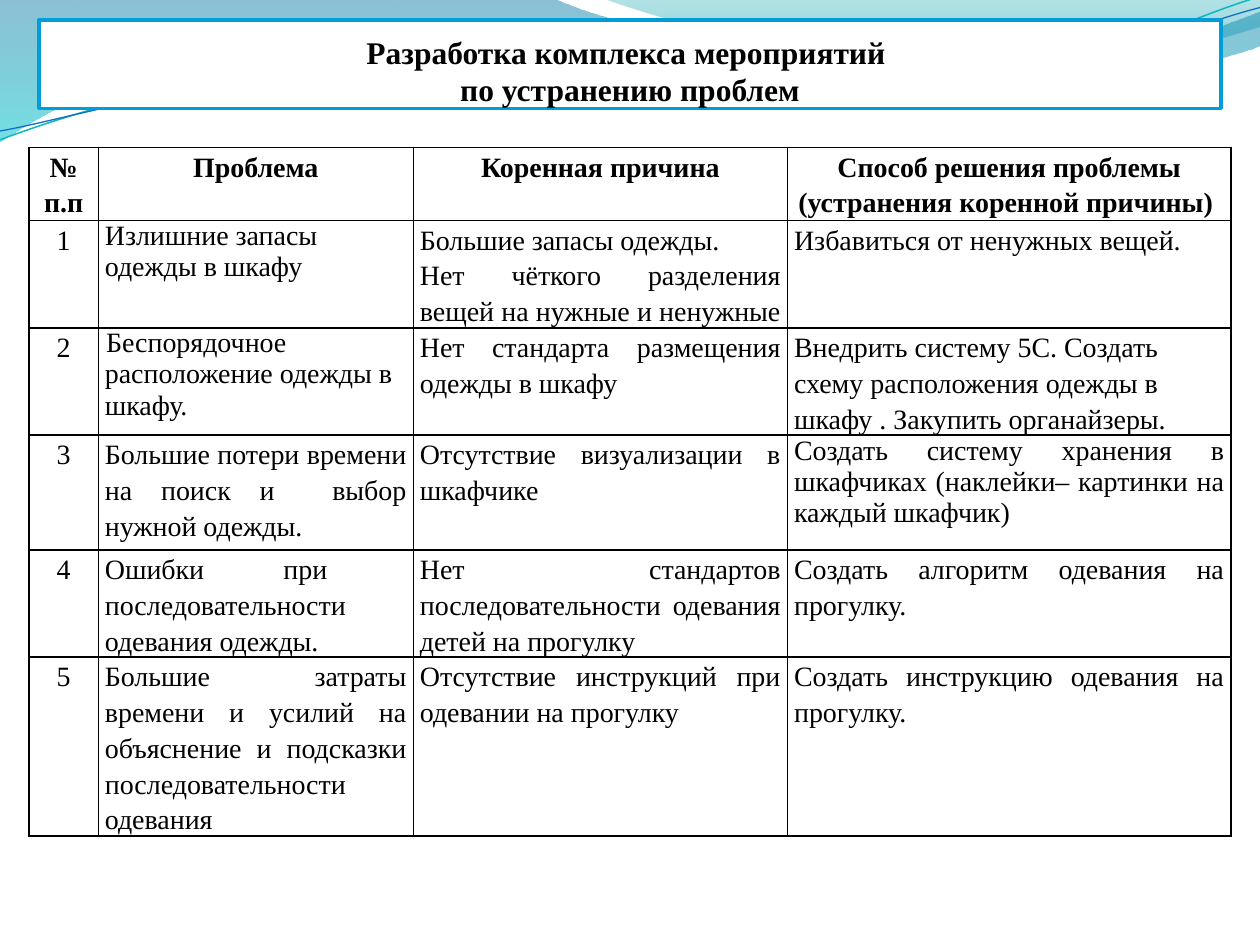
from lxml import etree
from pptx import Presentation, util as u
from pptx.dml.color import RGBColor
from pptx.enum import text
from pptx.oxml.ns import qn

FONT = "Times New Roman"
LEFT, CENTER, JUSTIFY = text.PP_ALIGN.LEFT, text.PP_ALIGN.CENTER, text.PP_ALIGN.JUSTIFY
TITLE = "Разработка комплекса мероприятий \vпо устранению проблем"
ROWS = [
    ["№\nп.п", "Проблема", "Коренная причина",
     "Способ решения проблемы (устранения коренной причины) "],
    ["1", "Излишние запасы одежды в шкафу",
     "Большие запасы одежды.\nНет чёткого разделения вещей на нужные и ненужные ",
     "Избавиться от ненужных вещей. "],
    ["2", "Беспорядочное расположение одежды в шкафу.",
     "Нет стандарта размещения одежды в шкафу",
     "Внедрить систему 5С. Создать схему расположения одежды в шкафу . Закупить органайзеры."],
    ["3", "Большие потери времени на поиск и  выбор нужной одежды.",
     "Отсутствие визуализации в шкафчике",
     "Создать систему хранения в шкафчиках (наклейки– картинки на каждый шкафчик)"],
    ["4", "Ошибки при  последовательности одевания одежды. ",
     "Нет стандартов последовательности одевания детей на прогулку",
     "Создать алгоритм одевания на прогулку."],
    ["5", "Большие затраты времени и усилий на объяснение и подсказки последовательности одевания ",
     "Отсутствие инструкций при одевании на прогулку",
     "Создать инструкцию одевания на прогулку."],
]
COLS = [0.55, 2.5, 2.97, 3.52]
HEIGHTS = [0.58, 0.85, 0.85, 0.91, 0.85, 1.42]
SPECIAL = {
    (1, 1): {"alignment": LEFT, "line_spacing": 1.0},
    (2, 1): {"alignment": LEFT, "line_spacing": 1.0},
    (2, 3): {"alignment": LEFT},
    (3, 3): {"line_spacing": 1.0, "space_before": u.Pt(3.6)},
}
WAVES = [
    ([(0, 0), (4.4, -0.01), (4.76, 0.17, 6.64, 0.63, 7.58, 0.63),
      (8.53, 0.63, 9.58, 0.26, 10, 0.09), (10.01, 0.36),
      (9.83, 0.44, 8.7, 0.76, 7.46, 0.75), (6.22, 0.75, 3.82, 0.28, 2.57, 0.34),
      (1.29, 0.36, 0.46, 0.83, -0.01, 1.13), (0, 0)],
     [(0, "0074A1", 45), (1, "00C6CF", 55)]),
    ([(4.79, -0.01), (5.09, 0.11, 6.82, 0.62, 7.69, 0.65),
      (8.56, 0.69, 9.61, 0.32, 10, 0.21), (10, 0), (4.79, -0.01)],
     [(0, "00A1A9", 30), (0.8, "008BBF", 45)]),
]
CURVES = [
    ([(0, 1.11), (0.48, 0.93, 1.58, 0.57, 2.77, 0.52),
      (3.95, 0.47, 5.93, 0.89, 7.13, 0.8), (8.33, 0.71, 9.38, 0.15, 9.98, -0.02)],
     "0AB8BF", 0.85),
    ([(0, 1.04), (0.47, 0.96, 1.64, 0.61, 2.83, 0.56),
      (4.03, 0.51, 5.97, 0.84, 7.17, 0.75), (8.36, 0.67, 9.41, 0.21, 10, 0.06)],
     "0F6FC6", 0.75),
]


def rgb(value):
    return RGBColor.from_string(value)


def assign(obj, values):
    for name, value in values.items():
        setattr(obj, name, value)


def draw(slide, path, close):
    ends = [(u.Inches(seg[-2]), u.Inches(seg[-1])) for seg in path]
    builder = slide.shapes.build_freeform(*ends[0])
    builder.add_line_segments(ends[1:], close=close)
    sp = builder.convert_to_shape()
    sp.shadow.inherit = False
    lines = list(sp._element.spPr.iter(qn("a:lnTo")))
    for line, seg in zip(lines, path[1:]):
        if len(seg) == 6:
            bend = etree.Element(qn("a:cubicBezTo"))
            for x, y in zip(seg[::2], seg[1::2]):
                etree.SubElement(bend, qn("a:pt"), x=str(u.Inches(x) - sp.left),
                                 y=str(u.Inches(y) - sp.top))
            line.getparent().replace(line, bend)
    return sp


def add_waves(slide):
    for path, stops in WAVES:
        sp = draw(slide, path, True)
        sp.line.fill.background()
        sp.fill.gradient()
        sp.fill.gradient_angle = 270
        for stop, (pos, color, _) in zip(sp.fill.gradient_stops, stops):
            stop.position = pos
            stop.color.rgb = rgb(color)
        for clr, (_, _, alpha) in zip(sp._element.spPr.iter(qn("a:srgbClr")), stops):
            etree.SubElement(clr, qn("a:alpha"), val=str(alpha * 1000))
    for path, color, width in CURVES:
        sp = draw(slide, path, False)
        sp.fill.background()
        sp.line.color.rgb = rgb(color)
        sp.line.width = u.Pt(width)


def write(tf, content, size, bold, para):
    tf.text = content
    for p in tf.paragraphs:
        assign(p, para)
        for r in p.runs:
            assign(r.font, {"name": FONT, "size": u.Pt(size), "bold": bold})
            r.font.color.rgb = rgb("000000")


def add_title(slide):
    sp = slide.shapes.title
    slide.shapes._spTree.append(sp._element)
    assign(sp, {"left": u.Inches(0.31), "top": u.Inches(0.16),
                "width": u.Inches(9.38), "height": u.Inches(0.7)})
    sp.fill.solid()
    sp.fill.fore_color.rgb = rgb("FFFFFF")
    sp.line.color.rgb = rgb("009DD9")
    sp.line.width = u.Pt(2)
    assign(sp.text_frame, {"margin_left": 0, "margin_right": 0, "margin_bottom": 0,
                           "margin_top": u.Inches(0.05), "word_wrap": True,
                           "auto_size": text.MSO_AUTO_SIZE.NONE,
                           "vertical_anchor": text.MSO_ANCHOR.BOTTOM})
    write(sp.text_frame, TITLE, 18, True,
          {"alignment": CENTER, "line_spacing": 1.0, "space_before": u.Pt(0)})


def add_borders(cell):
    tc_pr = cell._tc.get_or_add_tcPr()
    for i, side in enumerate(("lnL", "lnR", "lnT", "lnB")):
        ln = etree.Element(qn(f"a:{side}"), w=str(u.Pt(1)))
        fill = etree.SubElement(ln, qn("a:solidFill"))
        etree.SubElement(fill, qn("a:srgbClr"), val="000000")
        tc_pr.insert(i, ln)


def add_problem_table(slide):
    frame = slide.shapes.add_table(len(ROWS), len(COLS), u.Inches(0.23), u.Inches(1.17),
                                   u.Inches(sum(COLS)), u.Inches(sum(HEIGHTS)))
    table = frame.table
    assign(table, {"first_row": False, "horz_banding": False})
    for col, width in zip(table.columns, COLS):
        col.width = u.Inches(width)
    for row, height in zip(table.rows, HEIGHTS):
        row.height = u.Inches(height)
    for i, row in enumerate(ROWS):
        for j, content in enumerate(row):
            cell = table.cell(i, j)
            side = u.Pt(3.8)
            assign(cell, {"margin_left": side, "margin_right": side,
                          "margin_top": 0, "margin_bottom": 0})
            cell.fill.solid()
            cell.fill.fore_color.rgb = rgb("FFFFFF")
            add_borders(cell)
            para = {"alignment": JUSTIFY if i and j else CENTER, "line_spacing": 1.15}
            write(cell.text_frame, content, 16, i == 0, {**para, **SPECIAL.get((i, j), {})})
    p = table.cell(2, 1).text_frame.paragraphs[0]
    p._p.get_or_add_pPr().set("indent", str(u.Inches(0.01)))


def main():
    prs = Presentation()
    assign(prs, {"slide_width": u.Inches(10), "slide_height": u.Inches(7.5)})
    slide = prs.slides.add_slide(prs.slide_layouts[5])
    add_waves(slide)
    add_title(slide)
    add_problem_table(slide)
    prs.save("out.pptx")


if __name__ == "__main__":
    main()
